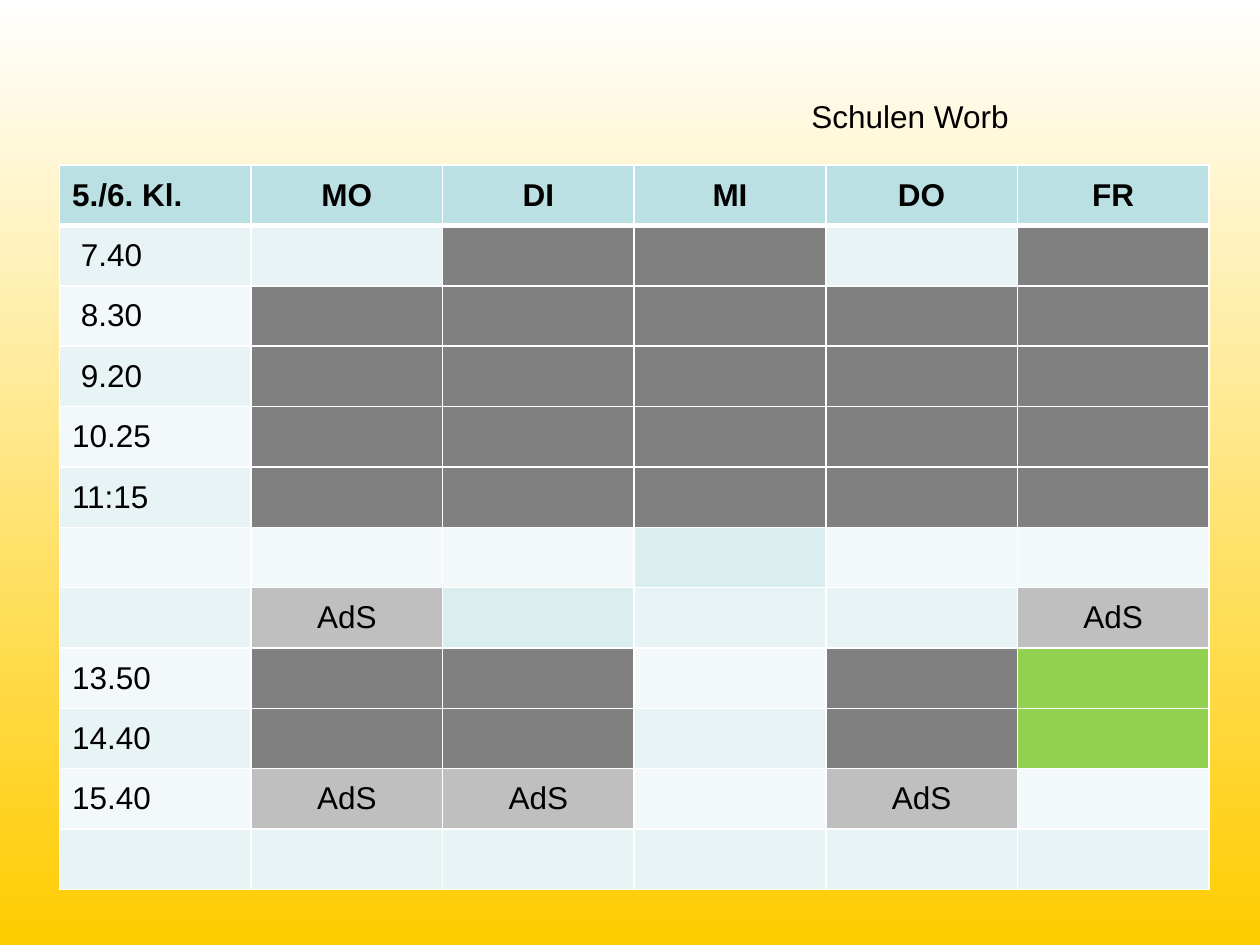
from dataclasses import dataclass

from lxml.etree import SubElement
from pptx import Presentation
from pptx.dml.color import RGBColor
from pptx.enum.text import MSO_ANCHOR, PP_ALIGN
from pptx.oxml.ns import qn
from pptx.util import Pt


@dataclass(frozen=True)
class Theme:
    font: str = "Arial"
    size: float = 18
    text: str = "000000"
    background: tuple = ("FFFFFF", "FFCC00")
    border: str = "FFFFFF"
    header: str = "BBE0E3"
    bands: tuple = ("E7F3F4", "F3F9FA")
    lesson: str = "808080"
    care: str = "BFBFBF"
    tint: str = "DAEDEF"
    free: str = "92D050"


THEME = Theme()

# Cell codes: L lesson, A supervised homework, T tinted, F free, - band colour
FILLS = {"L": THEME.lesson, "A": THEME.care, "T": THEME.tint, "F": THEME.free}
LABELS = {"A": "AdS"}

HEADER = ["5./6. Kl.", "MO", "DI", "MI", "DO", "FR"]
TIMETABLE = [
    (" 7.40", "-LL-L"),
    (" 8.30", "LLLLL"),
    (" 9.20", "LLLLL"),
    ("10.25", "LLLLL"),
    ("11:15", "LLLLL"),
    ("", "--T--"),
    ("", "AT--A"),
    ("13.50", "LL-LF"),
    ("14.40", "LL-LF"),
    ("15.40", "AA-A-"),
    ("", "-----"),
]

TABLE_LEFT, TABLE_TOP = 34, 94.3
COLUMN_WIDTH, ROW_HEIGHT = 109.5, 34.5


def write_text(text_frame, text, alignment=PP_ALIGN.LEFT, bold=False):
    paragraph = text_frame.paragraphs[0]
    paragraph.text = text
    paragraph.alignment = alignment
    formats = {"name": THEME.font, "size": Pt(THEME.size), "bold": bold}
    for name, value in formats.items():
        setattr(paragraph.font, name, value)
    paragraph.font.color.rgb = RGBColor.from_string(THEME.text)


def set_borders(cell, widths):
    properties = cell._tc.get_or_add_tcPr()
    for side, width in widths.items():
        line = SubElement(properties, qn(f"a:ln{side}"), w=str(Pt(width)))
        fill = SubElement(line, qn("a:solidFill"))
        SubElement(fill, qn("a:srgbClr"), val=THEME.border)


def format_cell(cell, text, color, centred, header=False, below_header=False):
    widths = {"L": 1, "R": 1, "T": 3 if below_header else 1, "B": 3 if header else 1}
    set_borders(cell, widths)
    cell.fill.solid()
    cell.fill.fore_color.rgb = RGBColor.from_string(color)
    cell.vertical_anchor = MSO_ANCHOR.MIDDLE
    alignment = PP_ALIGN.CENTER if centred else PP_ALIGN.LEFT
    write_text(cell.text_frame, text, alignment, bold=header)


def set_background(slide):
    fill = slide.background.fill
    fill.gradient()
    fill.gradient_angle = 270
    for stop, color, position in zip(fill.gradient_stops, THEME.background, (0, 1)):
        stop.color.rgb = RGBColor.from_string(color)
        stop.position = position


def add_heading(slide, text):
    title = slide.shapes.title
    box = {"left": 456.5, "top": 51.8, "width": 136, "height": 29}
    for name, value in box.items():
        setattr(title, name, Pt(value))
    title.text_frame.word_wrap = True
    title.text_frame.vertical_anchor = MSO_ANCHOR.TOP
    write_text(title.text_frame, text)


def add_timetable(slide):
    row_count, column_count = len(TIMETABLE) + 1, len(HEADER)
    table = slide.shapes.add_table(
        row_count, column_count, Pt(TABLE_LEFT), Pt(TABLE_TOP),
        Pt(COLUMN_WIDTH * column_count), Pt(ROW_HEIGHT * row_count),
    ).table
    for column in table.columns:
        column.width = Pt(COLUMN_WIDTH)
    for row in table.rows:
        row.height = Pt(ROW_HEIGHT)

    # Weekday header
    for column, text in enumerate(HEADER):
        format_cell(table.cell(0, column), text, THEME.header, column > 0, header=True)

    # Start times and lessons
    for row, (time, codes) in enumerate(TIMETABLE, start=1):
        band = THEME.bands[(row - 1) % 2]
        entries = [(time, band)]
        entries += [(LABELS.get(code, ""), FILLS.get(code, band)) for code in codes]
        for column, (text, color) in enumerate(entries):
            format_cell(table.cell(row, column), text, color, column > 0,
                        below_header=row == 1)


def main():
    presentation = Presentation()
    presentation.slide_width, presentation.slide_height = Pt(720), Pt(540)
    slide = presentation.slides.add_slide(presentation.slide_layouts[5])
    set_background(slide)
    add_heading(slide, "Schulen Worb")
    add_timetable(slide)
    presentation.save("out.pptx")


if __name__ == "__main__":
    main()
